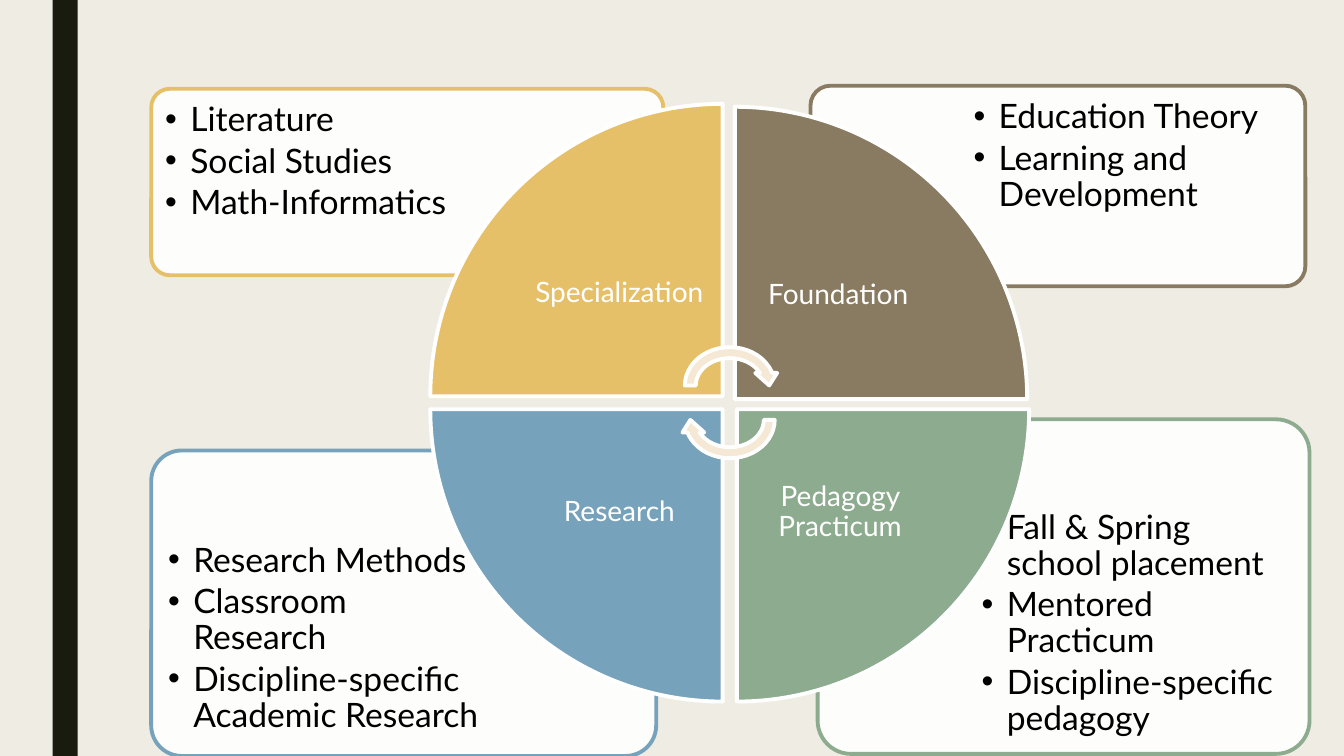
from lxml.etree import SubElement
from pptx import Presentation
from pptx.dml.color import RGBColor
from pptx.enum.shapes import MSO_SHAPE as Preset
from pptx.enum.text import MSO_ANCHOR as Anchor, PP_ALIGN as Align
from pptx.oxml.ns import qn
from pptx.util import Pt

BACKGROUND = RGBColor(0xEF, 0xED, 0xE3)
BAR = RGBColor(0x19, 0x1B, 0x0E)
GOLD = RGBColor(0xE6, 0xC0, 0x69)
BROWN = RGBColor(0x89, 0x7B, 0x61)
GREEN = RGBColor(0x8D, 0xAB, 0x8E)
BLUE = RGBColor(0x77, 0xA2, 0xBB)
CREAM = RGBColor(0xF5, 0xE8, 0xD4)
WHITE = RGBColor(0xFF, 0xFF, 0xFF)
BLACK = RGBColor(0, 0, 0)

FONT = "Lato"
WEDGE_SIZE = 208.8
LABEL_SIZE = 147.6
LINE_WIDTH = 2.75

QUADRANTS = [
    {"label": "Pedagogy Practicum", "color": GREEN, "rotation": 180,
     "wedge": (526.3, 292.3), "card": (584, 299.5, 351.4, 239),
     "list": (694.1, 365, 235.4, 169.2), "anchor": Anchor.BOTTOM,
     "items": ["Fall & Spring school placement", "Mentored Practicum",
               "Discipline-specific pedagogy"]},
    {"label": "Research", "color": BLUE, "rotation": 270,
     "wedge": (307.4, 292.3), "card": (108, 321.8, 360.7, 218.2),
     "list": (113, 380.9, 242.6, 154.1), "anchor": Anchor.TOP,
     "items": ["Research Methods", "Classroom Research",
               "Discipline-specific Academic Research"]},
    {"label": "Foundation", "color": BROWN, "rotation": 90,
     "wedge": (524.9, 76.3), "card": (578.9, 61.2, 353.5, 143.3),
     "list": (688.3, 64.1, 241.2, 101.5), "anchor": Anchor.TOP,
     "items": ["Education Theory", "Learning and Development"]},
    {"label": "Specialization", "color": GOLD, "rotation": 0,
     "wedge": (307.4, 74.2), "card": (108, 63.4, 365.8, 133.2),
     "list": (110.9, 66.2, 249.8, 94.3), "anchor": Anchor.TOP,
     "items": ["Literature", "Social Studies", "Math-Informatics"]},
]
ARROWS = [(244.1, 0), (268.6, 180)]


def add_preset(slide, preset, box, fill, line=None, rotation=0, opacity=100):
    shape = slide.shapes.add_shape(preset, *map(Pt, box))
    shape.shadow.inherit = False
    shape.rotation = rotation
    shape.fill.solid()
    shape.fill.fore_color.rgb = fill
    if opacity < 100:
        color = shape.fill._xPr.find(qn("a:solidFill"))[0]
        SubElement(color, qn("a:alpha"), val=str(opacity * 1000))
    if line is None:
        shape.line.fill.background()
    else:
        shape.line.color.rgb = line
        shape.line.width = Pt(LINE_WIDTH)
    return shape


def add_text(slide, box, lines, size, color, anchor, align=Align.LEFT,
             insets=(7.2, 7.2, 7.2, 7.2), space_after=0, bullet_indent=0):
    frame = slide.shapes.add_textbox(*map(Pt, box)).text_frame
    frame.word_wrap = True
    frame.vertical_anchor = anchor
    (frame.margin_left, frame.margin_top,
     frame.margin_right, frame.margin_bottom) = map(Pt, insets)
    for index, line in enumerate(lines):
        paragraph = frame.add_paragraph() if index else frame.paragraphs[0]
        paragraph.alignment = align
        paragraph.line_spacing = 0.9
        paragraph.space_after = Pt(space_after)
        run = paragraph.add_run()
        run.text = line
        run.font.name = FONT
        run.font.size = Pt(size)
        run.font.color.rgb = color
        if bullet_indent:
            properties = paragraph._p.get_or_add_pPr()
            properties.set("marL", str(Pt(bullet_indent)))
            properties.set("indent", str(-Pt(bullet_indent)))
            SubElement(properties, qn("a:buFont"), typeface="Arial")
            SubElement(properties, qn("a:buChar"), char="•")


def main():
    presentation = Presentation()
    presentation.slide_width, presentation.slide_height = Pt(960), Pt(540)
    slide = presentation.slides.add_slide(presentation.slide_layouts[6])
    slide.background.fill.solid()
    slide.background.fill.fore_color.rgb = BACKGROUND
    add_preset(slide, Preset.RECTANGLE, (37.5, 0, 18, 540), BAR)

    for quadrant in QUADRANTS:
        card = add_preset(slide, Preset.ROUNDED_RECTANGLE, quadrant["card"],
                          WHITE, line=quadrant["color"], opacity=90)
        card.adjustments[0] = 0.1
        add_text(slide, quadrant["list"], quadrant["items"], size=24, color=BLACK,
                 anchor=quadrant["anchor"], insets=(7.2, 7.2, 10, 7.2),
                 space_after=3.6, bullet_indent=18)

    inner_offset = WEDGE_SIZE - LABEL_SIZE
    for quadrant in QUADRANTS:
        left, top = quadrant["wedge"]
        add_preset(slide, Preset.PIE_WEDGE, (left, top, WEDGE_SIZE, WEDGE_SIZE),
                   quadrant["color"], line=WHITE, rotation=quadrant["rotation"])
        label_left = left + (inner_offset if left < 480 else 0)
        label_top = top + (inner_offset if top < 270 else 0)
        add_text(slide, (label_left, label_top, LABEL_SIZE, LABEL_SIZE),
                 [quadrant["label"]], size=20, color=WHITE, anchor=Anchor.MIDDLE,
                 align=Align.CENTER, insets=(11.5, 11.5, 11.5, 11.5))

    for top, rotation in ARROWS:
        add_preset(slide, Preset.CIRCULAR_ARROW, (485.3, top, 72, 62.6),
                   CREAM, line=WHITE, rotation=rotation)

    presentation.save("out.pptx")


if __name__ == "__main__":
    main()
